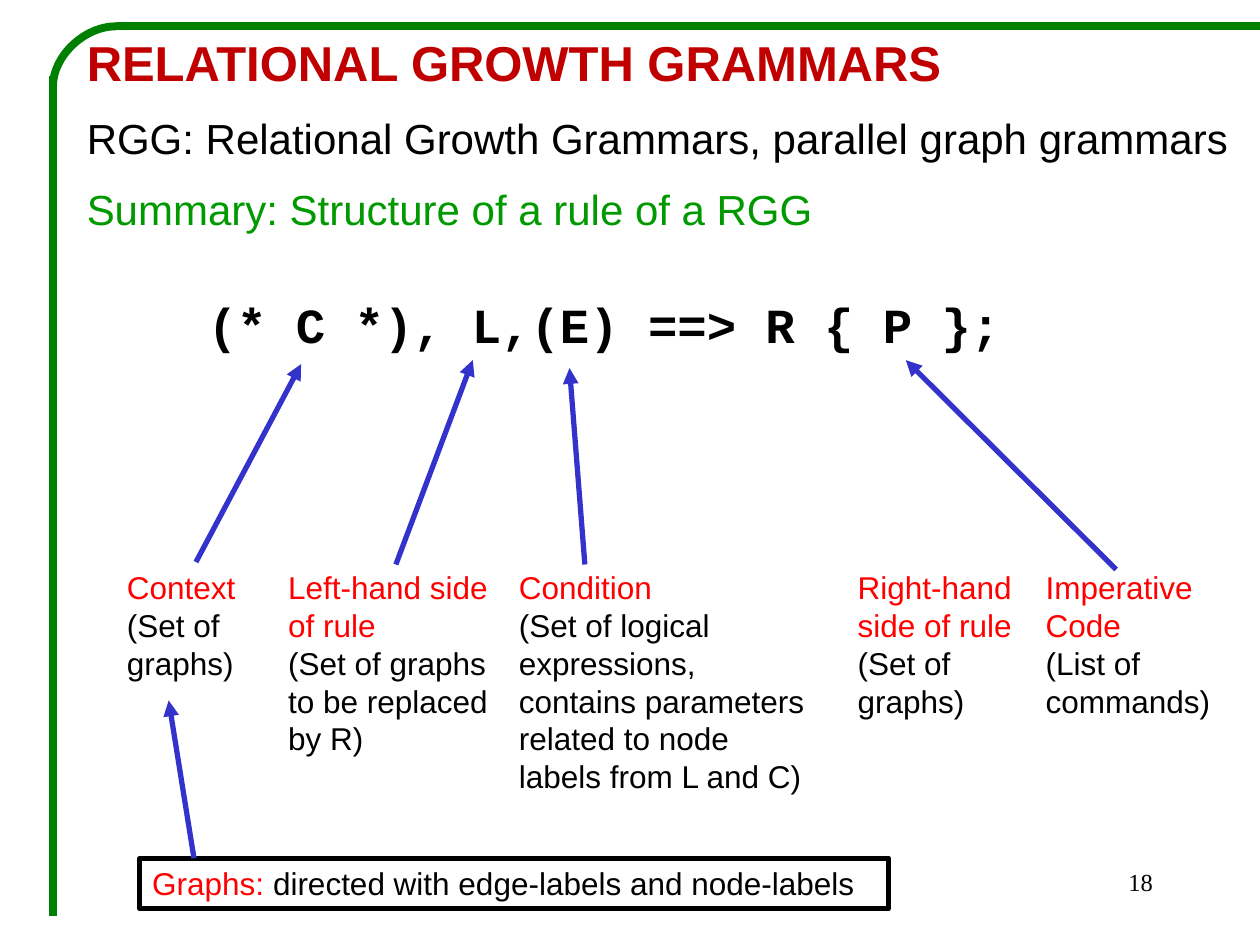
from collections import namedtuple

from lxml import etree
from pptx import Presentation
from pptx import util as u
from pptx.dml.color import RGBColor
from pptx.enum import shapes, text
from pptx.oxml import ns

Box = namedtuple("Box", "left top width height")
COLORS = {
    "white": "FFFFFF",
    "black": "000000",
    "title": "C00000",
    "summary": "009900",
    "term": "FF0000",
    "frame": "008000",
    "arrow": "3333CC",
}


def color(name):
    return RGBColor.from_string(COLORS[name])


def write(paragraph, content, font="Arial", size=18, ink="black", bold=False, align=None, spaced=False):
    run = paragraph.add_run()
    run.text = content
    run.font.name = font
    run.font.size = u.Pt(size)
    run.font.bold = bold
    run.font.color.rgb = color(ink)
    paragraph.alignment = align or text.PP_ALIGN.LEFT
    if spaced:
        spacing = etree.SubElement(paragraph._p.get_or_add_pPr(), ns.qn("a:spcBef"))
        etree.SubElement(spacing, ns.qn("a:spcPct"), val="50000")


def add_text_box(slide, box):
    shape = slide.shapes.add_textbox(*map(u.Cm, box))
    shape.text_frame.word_wrap = True
    return shape


def add_panel(slide, box, border=None):
    shape = slide.shapes.add_shape(shapes.MSO_SHAPE.RECTANGLE, *map(u.Cm, box))
    shape.shadow.inherit = False
    shape.fill.solid()
    shape.fill.fore_color.rgb = color("white")
    if border:
        shape.line.color.rgb = color(border)
        shape.line.width = u.Pt(3)
    else:
        shape.line.fill.background()
    shape.text_frame.word_wrap = True
    shape.text_frame.vertical_anchor = text.MSO_ANCHOR.TOP
    return shape


def add_line(slide, start, end, ink, width, kind=shapes.MSO_CONNECTOR.STRAIGHT):
    connector = slide.shapes.add_connector(kind, *map(u.Cm, (*start, *end)))
    connector.line.color.rgb = color(ink)
    connector.line.width = u.Pt(width)
    etree.SubElement(connector._element.spPr, ns.qn("a:effectLst"))
    return connector


def add_arrow(slide, start, end):
    connector = add_line(slide, start, end, "arrow", 3)
    line = connector._element.spPr.find(ns.qn("a:ln"))
    etree.SubElement(line, ns.qn("a:tailEnd"), type="triangle")
    return connector


def add_frame(slide, box, corner_width, corner_height):
    right, bottom = box.left + box.width, box.top + box.height
    corner_right = box.left + corner_width
    add_line(slide, (right, box.top), (corner_right, box.top), "frame", 4.5)
    add_line(slide, (box.left, box.top + corner_height - 0.2), (box.left, bottom), "frame", 4.5)

    middle_x, middle_y = box.left + corner_width / 2, box.top + corner_height / 2
    start = middle_x - corner_height / 2, middle_y - corner_width / 2
    end = middle_x + corner_height / 2, middle_y + corner_width / 2
    curve = add_line(slide, start, end, "frame", 4.5, shapes.MSO_CONNECTOR.CURVE)
    properties = curve._element.spPr
    properties.find(ns.qn("a:prstGeom")).set("prst", "curvedConnector2")
    properties.find(ns.qn("a:xfrm")).set("rot", str(270 * 60000))


def add_heading(slide, box):
    frame = add_text_box(slide, box).text_frame
    write(frame.paragraphs[0], "RELATIONAL GROWTH GRAMMARS", size=28, ink="title", bold=True, spaced=True)
    write(frame.add_paragraph(), "RGG: Relational Growth Grammars, parallel graph grammars", size=24, spaced=True)
    write(frame.add_paragraph(), "Summary: Structure of a rule of a RGG", size=24, ink="summary", spaced=True)


def add_formula(slide, box):
    paragraph = add_panel(slide, box).text_frame.paragraphs[0]
    write(paragraph, "(* C *), L,(E) ==> R { P };", font="Courier New", size=28, bold=True, spaced=True)


def add_callout(slide, box, term, details, start=None, end=None):
    shape = add_panel(slide, box)
    write(shape.text_frame.paragraphs[0], term, ink="term")
    for detail in details:
        write(shape.text_frame.add_paragraph(), detail)
    if end:
        offset_x, offset_y = start or (box.width / 2, 0)
        arrow = add_arrow(slide, (box.left + offset_x, box.top + offset_y), end)
        if start is None:
            arrow.begin_connect(shape, 0)


def add_callouts(slide, box):
    callouts = [
        (0, 3.28, 2.57, "Context", ["(Set of graphs)"], None, (6.07, 7.34)),
        (3.25, 4.65, 4.11, "Left-hand side of rule",
         ["(Set of graphs", "to be replaced by R)"], (2.42, 0.05), (9.53, 7.26)),
        (7.9, 6.5, 4.88, "Condition",
         ["(Set of logical expressions, contains parameters related to node labels from L and C)"],
         (1.58, 0.05), (11.48, 7.42)),
        (14.73, 3.66, 3.33, "Right-hand side of rule", ["(Set of graphs)"], None, None),
        (18.52, 4.06, 3.33, "Imperative Code", ["(List of commands)"], (1.67, 0.15), (18.26, 7.26)),
    ]
    for offset, width, height, *content in callouts:
        add_callout(slide, Box(box.left + offset, box.top, width, height), *content)


def add_graph_note(slide, box):
    paragraph = add_panel(slide, box, border="black").text_frame.paragraphs[0]
    write(paragraph, "Graphs: ", ink="term")
    write(paragraph, "directed with edge-labels and node-labels")
    add_arrow(slide, (box.left + 1.09, box.top), (box.left + 0.58, box.top - 3.18))


def add_page_number(slide, box):
    paragraph = add_text_box(slide, box).text_frame.paragraphs[0]
    write(paragraph, "18", font="Times New Roman", size=14, align=text.PP_ALIGN.RIGHT)


def main():
    presentation = Presentation()
    presentation.slide_width = u.Cm(25.4)
    presentation.slide_height = u.Cm(19.05)
    slide = presentation.slides.add_slide(presentation.slide_layouts[6])
    add_heading(slide, Box(1.5, 0.53, 23.6, 4.52))
    add_formula(slide, Box(3.94, 5.82, 17.81, 1.45))
    add_frame(slide, Box(1.07, 0.53, 24.33, 17.94), 1.27, 1.2)
    add_page_number(slide, Box(18.21, 17.35, 5.28, 1.27))
    add_callouts(slide, Box(2.31, 11.33, 22.58, 4.88))
    add_graph_note(slide, Box(2.82, 17.3, 15.09, 1.02))
    presentation.save("out.pptx")


if __name__ == "__main__":
    main()
